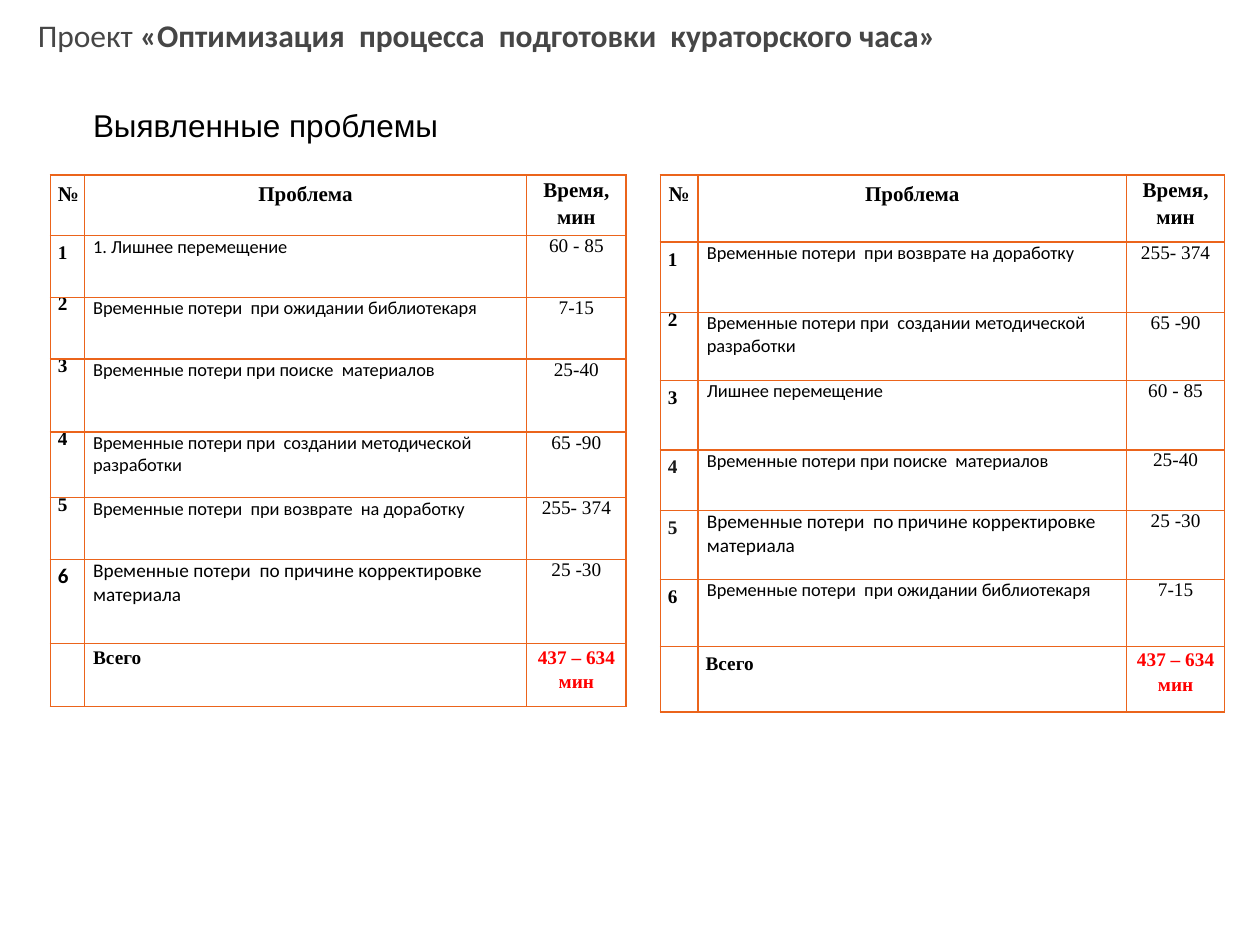
from lxml import etree
from pptx import Presentation
from pptx.dml.color import RGBColor
from pptx.enum.text import MSO_ANCHOR, MSO_AUTO_SIZE, PP_ALIGN
from pptx.oxml.ns import qn
from pptx.util import Inches, Pt

LEFT, CENTER = PP_ALIGN.LEFT, PP_ALIGN.CENTER
TOP = MSO_ANCHOR.TOP
NO_FIT, FIT_SHAPE = MSO_AUTO_SIZE.NONE, MSO_AUTO_SIZE.SHAPE_TO_FIT_TEXT

SERIF, SANS = "Times New Roman", "Calibri"
BLACK, RED, ORANGE = "000000", "FF0000", "EB641B"
NUMBER_MARGINS, TEXT_MARGINS, NO_MARGINS = (0.06, 0.03), (0.07, 0), (0, 0)
TIGHT = Pt(8)

HEADINGS = ("№", "Проблема", "Время, мин")
TOTAL = "437 – 634 мин"
LIBRARIAN = ("Временные потери  при ожидании библиотекаря", "7-15", 10.5)
SEARCH = ("Временные потери при поиске  материалов", "25-40", 10.5)
METHODICAL = ("Временные потери при  создании методической разработки", "65 -90", 10.5)
CORRECTION = ("Временные потери  по причине корректировке  материала", "25 -30", 11)
BY_PROCESS = [
    ("1. Лишнее перемещение", "60 - 85", 10.5),
    LIBRARIAN, SEARCH, METHODICAL,
    ("Временные потери  при возврате  на доработку", "255- 374", 10.5),
    CORRECTION,
]
BY_TIME = [
    ("Временные потери  при возврате на доработку", "255- 374", 10.5),
    METHODICAL,
    ("Лишнее перемещение", "60 - 85", 10.5),
    SEARCH, CORRECTION, LIBRARIAN,
]


def rgb(color):
    return RGBColor.from_string(color)


def set_font(font, name, size, color=BLACK, bold=False):
    font.name, font.size, font.bold = name, Pt(size), bold
    font.color.rgb = rgb(color)


def add_borders(cell, color):
    properties = cell._tc.get_or_add_tcPr()
    for position, side in enumerate(("a:lnL", "a:lnR", "a:lnT", "a:lnB")):
        line = etree.Element(qn(side), w=str(Pt(1)))
        fill = etree.SubElement(line, qn("a:solidFill"))
        etree.SubElement(fill, qn("a:srgbClr"), val=color)
        properties.insert(position, line)


def write_cell(cell, text, margins, size=11, font=SERIF, color=BLACK,
               bold=False, align=LEFT, spacing=None):
    cell.margin_left = cell.margin_right = Inches(margins[0])
    cell.margin_top = cell.margin_bottom = Inches(margins[1])
    cell.text = text
    paragraph = cell.text_frame.paragraphs[0]
    paragraph.alignment = align
    paragraph.line_spacing = spacing
    set_font(paragraph.font, font, size, color, bold)


def add_problem_table(slide, left, widths, heights, problems, number_styles,
                      total_margins):
    """number_styles maps a problem's number to its departures from the usual look."""
    table = slide.shapes.add_table(
        len(heights), len(widths), Inches(left), Inches(1.39),
        Inches(sum(widths)), Inches(sum(heights))).table
    for column, width in zip(table.columns, widths):
        column.width = Inches(width)
    for row, height in zip(table.rows, heights):
        row.height = Inches(height)
    for cell in table.iter_cells():
        cell.fill.solid()
        cell.fill.fore_color.rgb = rgb("FFFFFF")
        add_borders(cell, ORANGE)

    heading_margins = (NUMBER_MARGINS, NUMBER_MARGINS, NO_MARGINS)
    for column, (heading, margins) in enumerate(zip(HEADINGS, heading_margins)):
        write_cell(table.cell(0, column), heading, margins, size=12, bold=True,
                   align=CENTER, spacing=1.15)
    for number, (problem, minutes, size) in enumerate(problems, 1):
        style = {"spacing": 1.15, **number_styles.get(number, {})}
        write_cell(table.cell(number, 0), str(number), NUMBER_MARGINS,
                   bold=True, **style)
        write_cell(table.cell(number, 1), problem, TEXT_MARGINS, size, SANS)
        write_cell(table.cell(number, 2), minutes, TEXT_MARGINS, align=CENTER)
    last = len(heights) - 1
    label_margins, minutes_margins = total_margins
    write_cell(table.cell(last, 1), "Всего", label_margins, bold=True, spacing=1.15)
    write_cell(table.cell(last, 2), TOTAL, minutes_margins, color=RED, bold=True,
               align=CENTER, spacing=1.15)


def add_project_title(slide):
    title = slide.shapes.title
    title.left, title.top = Inches(0.2), Inches(0.08)
    title.width, title.height = Inches(9.61), Inches(0.4)
    frame = title.text_frame
    frame.auto_size, frame.vertical_anchor = NO_FIT, TOP
    paragraph = frame.paragraphs[0]
    paragraph.alignment = LEFT
    set_font(paragraph.font, SANS, 18, "464646")
    paragraph.add_run().text = "Проект "
    project = paragraph.add_run()
    project.text = "«Оптимизация  процесса  подготовки  кураторского часа»"
    project.font.bold = True


def add_subtitle(slide):
    frame = slide.shapes.add_textbox(
        Inches(0.64), Inches(0.79), Inches(2.97), Inches(0.4)).text_frame
    frame.word_wrap, frame.auto_size = False, FIT_SHAPE
    paragraph = frame.paragraphs[0]
    paragraph.text = "Выявленные проблемы"
    set_font(paragraph.font, "Arial", 18)


def main():
    presentation = Presentation()
    presentation.slide_width, presentation.slide_height = Inches(10), Inches(7.5)
    slide = presentation.slides.add_slide(presentation.slide_layouts[5])
    add_project_title(slide)
    add_subtitle(slide)

    tight, gray = {"spacing": TIGHT}, {"color": "191919"}
    process_styles = {number: tight for number in range(2, 6)}
    process_styles[6] = {"size": 12, "font": SANS, "spacing": None}
    add_problem_table(
        slide, 0.4, (0.27, 3.51, 0.79),
        (0.48, 0.49, 0.49, 0.58, 0.52, 0.49, 0.67, 0.5),
        BY_PROCESS, process_styles, (TEXT_MARGINS, TEXT_MARGINS))
    add_problem_table(
        slide, 5.24, (0.3, 3.4, 0.78),
        (0.53, 0.56, 0.54, 0.55, 0.48, 0.55, 0.53, 0.52),
        BY_TIME, {2: tight, 4: gray, 5: gray}, (NUMBER_MARGINS, NO_MARGINS))
    presentation.save("out.pptx")


if __name__ == "__main__":
    main()
